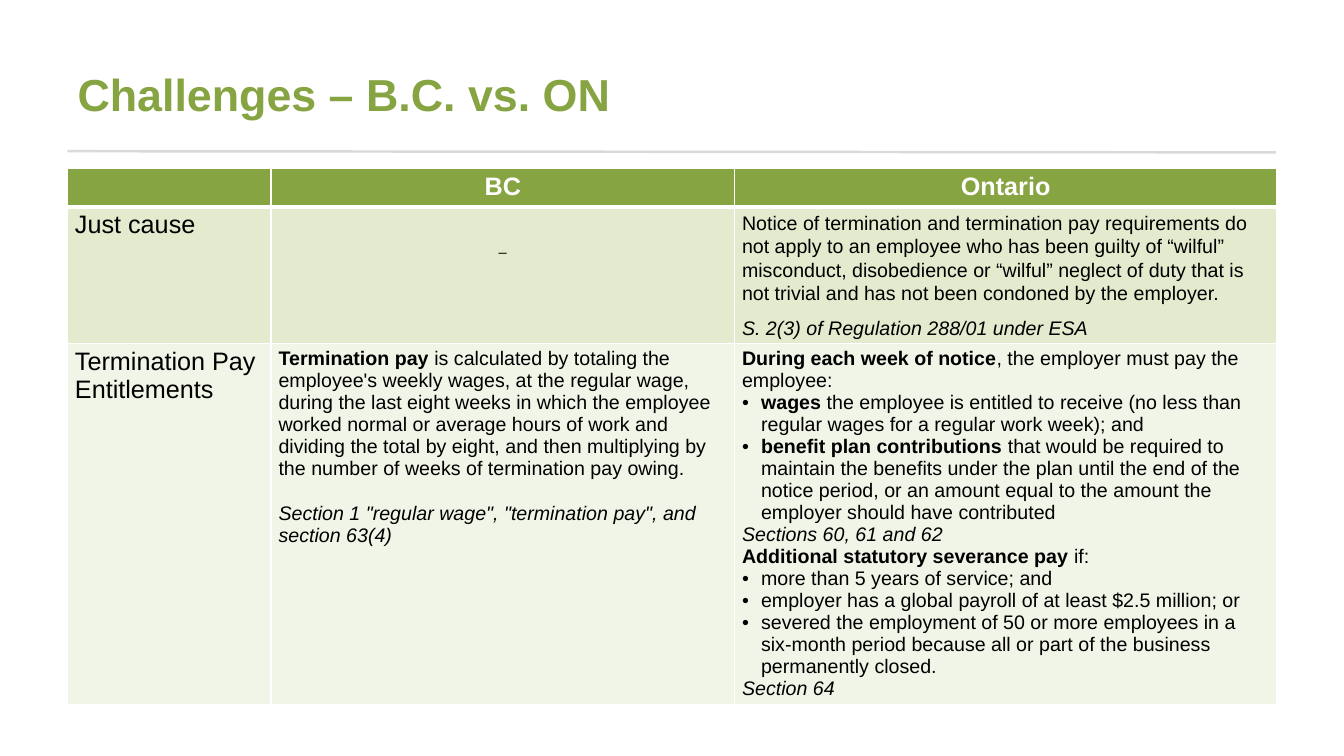
from lxml.etree import SubElement
from pptx import Presentation
from pptx.dml.color import RGBColor
from pptx.enum.shapes import MSO_CONNECTOR
from pptx.enum.text import MSO_ANCHOR, PP_ALIGN
from pptx.oxml.ns import qn
from pptx.util import Cm, Pt

GREEN = RGBColor(0x87, 0xA4, 0x43)
LIGHT_GREEN = RGBColor(0xE3, 0xEA, 0xCE)
PALE_GREEN = RGBColor(0xF1, 0xF5, 0xE8)
GREY = RGBColor(0xD9, 0xD9, 0xD9)
WHITE = RGBColor(0xFF, 0xFF, 0xFF)
BLACK = RGBColor(0, 0, 0)


def add_run(paragraph, text, size, color, bold=False, italic=False):
    run = paragraph.add_run()
    run.text = text
    run.font.color.rgb = color
    font_format = {"name": "Arial", "size": Pt(size), "bold": bold, "italic": italic}
    for name, value in font_format.items():
        setattr(run.font, name, value)


def add_borders(cell, bottom_width):
    widths = {"a:lnL": 1, "a:lnR": 1, "a:lnT": 1, "a:lnB": bottom_width}
    properties = cell._tc.get_or_add_tcPr()
    for tag, width in widths.items():
        line = SubElement(properties, qn(tag), w=str(Pt(width)))
        fill = SubElement(line, qn("a:solidFill"))
        SubElement(fill, qn("a:srgbClr"), val=str(WHITE))


presentation = Presentation()
presentation.slide_width = Cm(33.87)
presentation.slide_height = Cm(19.05)
slide = presentation.slides.add_slide(presentation.slide_layouts[5])

# Title
title = slide.shapes.title
title.left, title.top, title.width, title.height = Cm(1.7), Cm(0.76), Cm(30.48), Cm(3.18)
title.text_frame.vertical_anchor = MSO_ANCHOR.MIDDLE
title_paragraph = title.text_frame.paragraphs[0]
title_paragraph.alignment = PP_ALIGN.LEFT
add_run(title_paragraph, "Challenges – B.C. vs. ON", 32, GREEN, bold=True)

# Rule below the title
rule = slide.shapes.add_connector(MSO_CONNECTOR.STRAIGHT, Cm(1.7), Cm(3.81), Cm(32.16), Cm(3.84))
rule.line.color.rgb = GREY
rule.line.width = Pt(1.75)
SubElement(rule._element.spPr, qn("a:effectLst"))

# Table content: each paragraph is (kind, [(text, style), ...])
just_cause_ontario = [
    ("spaced", [("Notice of termination and termination pay requirements do not apply to an "
                 "employee who has been guilty of “wilful” misconduct, disobedience or “wilful” "
                 "neglect of duty that is not trivial and has not been condoned by the employer.", "")]),
    ("spaced", [("S. 2(3) of Regulation 288/01 under ESA", "italic")]),
]
termination_bc = [
    ("plain", [("Termination pay ", "bold"),
               ("is calculated by totaling the employee's weekly wages, at the regular wage, during "
                "the last eight weeks in which the employee worked normal or average hours of work "
                "and dividing the total by eight, and then multiplying by the number of weeks of "
                "termination pay owing.", "")]),
    ("apart", [('Section 1 "regular wage", "termination pay", and section 63(4)', "italic")]),
]
termination_ontario = [
    ("plain", [("During each week of notice", "bold"), (", the employer must pay the employee:", "")]),
    ("bullet", [("wages ", "bold"),
                ("the employee is entitled to receive (no less than regular wages for a regular "
                 "work week); and", "")]),
    ("bullet", [("benefit plan contributions", "bold"),
                (" that would be required to maintain the benefits under the plan until the end of "
                 "the notice period, or an amount equal to the amount the employer should have "
                 "contributed", "")]),
    ("plain", [("Sections 60, 61 and 62", "italic")]),
    ("plain", [("Additional statutory severance pay ", "bold"), ("if:", "")]),
    ("bullet", [("more than 5 years of service; and", "")]),
    ("bullet", [("employer has a global payroll of at least $2.5 million; or", "")]),
    ("bullet", [("severed the employment of 50 or more employees in a six-month period because all "
                 "or part of the business permanently closed.", "")]),
    ("plain", [("Section 64", "italic")]),
]
rows = [
    [[], [("center", [("BC", "bold")])], [("center", [("Ontario", "bold")])]],
    [[("plain", [("Just cause", "")])], [("center", [("–", "")])], just_cause_ontario],
    [[("plain", [("Termination Pay Entitlements", "")])], termination_bc, termination_ontario],
]
text_sizes = [[18, 18, 18], [18, 10.5, 14], [18, 14, 14]]
row_fills = [GREEN, LIGHT_GREEN, PALE_GREEN]
paragraph_formats = {
    "plain": {},
    "bullet": {},
    "center": {"alignment": PP_ALIGN.CENTER},
    "spaced": {"line_spacing": 1.07, "space_after": Pt(8)},
    "apart": {"space_before": Pt(16)},
}

# Table
table = slide.shapes.add_table(3, 3, Cm(1.7), Cm(4.24), Cm(30.48), Cm(13.29)).table
for column, width in zip(table.columns, [5.13, 11.68, 13.67]):
    column.width = Cm(width)
for row, height in zip(table.rows, [0.97, 3.28, 9.04]):
    row.height = Cm(height)

for row_index, row_cells in enumerate(rows):
    for column_index, cell_paragraphs in enumerate(row_cells):
        cell = table.cell(row_index, column_index)
        add_borders(cell, 3 if row_index == 0 else 1)
        cell.fill.solid()
        cell.fill.fore_color.rgb = row_fills[row_index]
        cell.margin_left = cell.margin_right = Cm(0.19)
        cell.margin_top = cell.margin_bottom = Cm(0.1)
        for index, (kind, runs) in enumerate(cell_paragraphs):
            frame = cell.text_frame
            paragraph = frame.paragraphs[0] if index == 0 else frame.add_paragraph()
            if kind == "bullet":
                properties = paragraph._p.get_or_add_pPr()
                properties.set("marL", str(Cm(0.48)))
                properties.set("indent", str(-Cm(0.48)))
                SubElement(properties, qn("a:buFont"), typeface="Arial")
                SubElement(properties, qn("a:buChar"), char="•")
            for name, value in paragraph_formats[kind].items():
                setattr(paragraph, name, value)
            for text, style in runs:
                add_run(paragraph, text, text_sizes[row_index][column_index],
                        WHITE if row_index == 0 else BLACK, style == "bold", style == "italic")

# The dash sits below the top of its cell
table.cell(1, 1).margin_top = Cm(0.95)

presentation.save("out.pptx")
